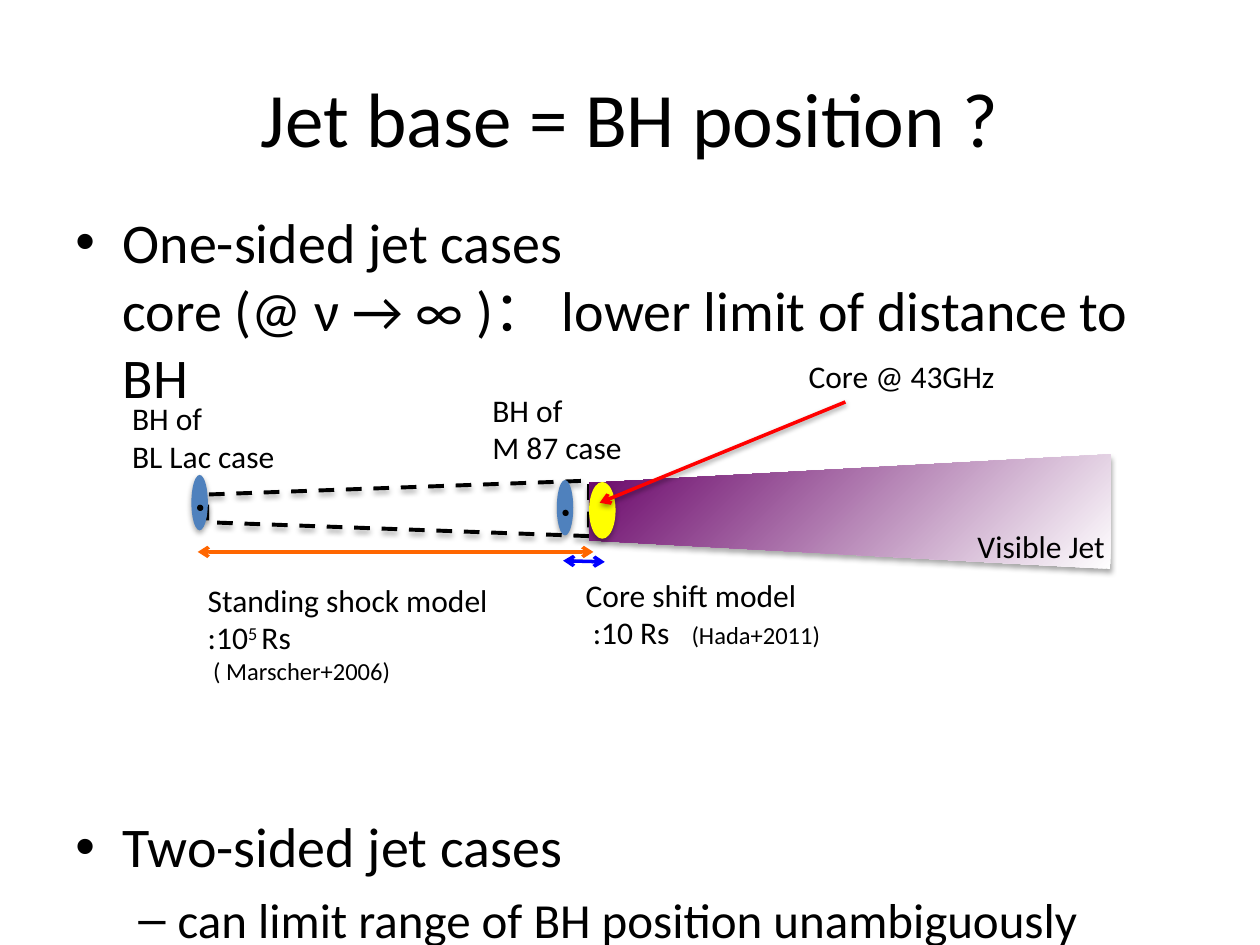
from lxml import etree
from pptx import Presentation
from pptx.dml.color import RGBColor
from pptx.enum.dml import MSO_LINE
from pptx.enum.shapes import MSO_CONNECTOR, MSO_SHAPE
from pptx.enum.text import MSO_ANCHOR, MSO_AUTO_SIZE, PP_ALIGN
from pptx.oxml import parse_xml
from pptx.oxml.ns import qn
from pptx.util import Pt

OVAL, TRAP = MSO_SHAPE.OVAL, MSO_SHAPE.TRAPEZOID
LINE, DASH = MSO_CONNECTOR.STRAIGHT, MSO_LINE.DASH
CENTER, MIDDLE = PP_ALIGN.CENTER, MSO_ANCHOR.MIDDLE
GROW = MSO_AUTO_SIZE.SHAPE_TO_FIT_TEXT
BLACK = RGBColor(0, 0, 0)
YELLOW = RGBColor(0xFF, 0xFF, 0)
DISK = RGBColor(0x4F, 0x81, 0xBD)
RED = RGBColor(0xFF, 0, 0)
BLUE = RGBColor(0, 0, 0xFF)
ORANGE = RGBColor(0xFF, 0x66, 0)
PURPLE = RGBColor(0x66, 0, 0x66)
WHITE = RGBColor(0xFF, 0xFF, 0xFF)
FONT = "Calibri"
NS = 'xmlns:a="http://schemas.openxmlformats.org/drawingml/2006/main"'


def style(run, size):
    run.font.name, run.font.size = FONT, Pt(size)
    run.font.color.rgb = BLACK


def shade(part, dist=1.8, alpha=35):
    """Soft shadow straight below the part."""
    part._element.spPr.find(qn("a:effectLst")).append(parse_xml(
        f'<a:outerShdw {NS} blurRad="{Pt(3.1)}" dist="{Pt(dist)}" dir="5400000" '
        f'rotWithShape="0"><a:srgbClr val="000000"><a:alpha val="{alpha * 1000}"/>'
        '</a:srgbClr></a:outerShdw>'))


def add_form(shapes, kind, box, fill=None, line=None, shadow=True):
    form = shapes.add_shape(kind, *map(Pt, box))
    form.shadow.inherit = False
    if fill is not None:
        form.fill.solid()
        form.fill.fore_color.rgb = fill
    else:
        form.fill.background()
    if line is not None:
        form.line.color.rgb = line
        form.line.width = Pt(0.75)
    else:
        form.line.fill.background()
    if shadow:
        shade(form)
    return form


def add_arrow(shapes, start, end, color, both=True):
    arrow = shapes.add_connector(LINE, *map(Pt, start + end))
    arrow.line.color.rgb = color
    arrow.line.width = Pt(2)
    for tag in ("a:headEnd", "a:tailEnd") if both else ("a:tailEnd",):
        etree.SubElement(arrow.line._get_or_add_ln(), qn(tag), type="arrow")
    etree.SubElement(arrow._element.spPr, qn("a:effectLst"))
    return arrow


def add_label(shapes, box, paras):
    """Each paragraph is a list of (text, size) runs."""
    label = shapes.add_textbox(*map(Pt, box))
    frame = label.text_frame
    frame.word_wrap, frame.auto_size = False, GROW
    for i, runs in enumerate(paras):
        para = frame.paragraphs[0] if i == 0 else frame.add_paragraph()
        for text, size in runs:
            run = para.add_run()
            run.text = text
            style(run, size)
    return label


def add_title(slide, box):
    frame = slide.shapes.add_textbox(*map(Pt, box)).text_frame
    frame.word_wrap, frame.vertical_anchor = True, MIDDLE
    frame.text = "Jet base = BH position ?"
    frame.paragraphs[0].alignment = CENTER
    style(frame.paragraphs[0].runs[0], 44)


def add_body(slide, box):
    frame = slide.shapes.add_textbox(*map(Pt, box)).text_frame
    frame.word_wrap = True
    # text, size, space before, margin, hanging indent, bullet
    rows = [
        ("One-sided jet cases \vcore (@ ν → ∞ )： lower limit of distance to BH",
         32, 6.4, 27, 27, "•"),
        ("Two-sided jet cases", 32, 230, 27, 27, "•"),
        ("can limit range of BH position unambiguously", 28, 5.6, 58.5, 22.5, "–"),
    ]
    for i, (text, size, gap, left, hang, mark) in enumerate(rows):
        para = frame.paragraphs[0] if i == 0 else frame.add_paragraph()
        para.text = text
        para.space_before = Pt(gap)
        for run in para.runs:
            style(run, size)
        props = para._p.get_or_add_pPr()
        props.set("marL", str(Pt(left)))
        props.set("indent", str(-Pt(hang)))
        etree.SubElement(props, qn("a:buFont"), typeface="Arial")
        etree.SubElement(props, qn("a:buChar"), char=mark)


def add_jet(slide, box):
    """Hidden jet (dashed), visible jet, core and its callout."""
    x, y = box
    shapes = slide.shapes
    # Jets: trapezoids turned so that the narrow side is left
    inner = add_form(shapes, TRAP, (x + 93.2, y - 109.1, 31.7, 218.2))
    inner.line.color.rgb = BLACK
    inner.line.width, inner.line.dash_style = Pt(2.25), DASH
    outer = add_form(shapes, TRAP, (x + 334.4, y - 147.2, 65.5, 298.1), PURPLE)
    for jet in (inner, outer):
        jet.rotation = 270
    props = outer._element.spPr
    stops = "".join(f'<a:gs pos="{pos}"><a:srgbClr val="{color}"/></a:gs>'
                    for pos, color in ((0, PURPLE), (100000, WHITE)))
    props.replace(props.find(qn("a:solidFill")), parse_xml(
        f'<a:gradFill {NS} rotWithShape="1"><a:gsLst>{stops}</a:gsLst>'
        '<a:path path="circle"><a:fillToRect r="100000" b="100000"/></a:path>'
        '</a:gradFill>'))
    # Core and callout
    add_form(shapes, OVAL, (x + 218.5, y - 14.7, 14.4, 31.7), YELLOW, YELLOW)
    add_label(shapes, (x + 336.5, y - 90.3, 121.7, 28.8), [[("Core @ 43GHz", 18)]])
    arrow = add_arrow(shapes, (x + 364.6, y - 60.8), (x + 224.2, y - 3.2), RED, False)
    shade(arrow, 1.6, 38)


def add_hole(slide, box, name, model, reach, color):
    """Black hole with its name above, reach arrow and model below."""
    x, y, w, h = box
    shapes = slide.shapes.add_group_shape().shapes
    add_form(shapes, OVAL, box, DISK)
    add_form(shapes, OVAL, (x + 3.2, y + 17, 3.6, 3.6), BLACK, shadow=False)
    dy, length, rise = reach
    add_arrow(shapes, (x + 3.6, y + dy), (x + 3.6 + length, y + dy + rise), color)
    dx, dy, wide, tall, paras = model
    note = add_label(shapes, (x + dx, y + dy, wide, tall), paras)
    dx, dy, wide, text = name
    add_label(shapes, (x + dx, y + dy, wide, 51.1), [[("BH of", 18)], [(text, 18)]])
    return note


def main():
    deck = Presentation()
    deck.slide_width, deck.slide_height = Pt(720), Pt(540)
    slide = deck.slides.add_slide(deck.slide_layouts[6])
    add_jet(slide, (118.5, 290.5))
    add_title(slide, (36, 21.6, 648, 90))
    add_body(slide, (36, 115.2, 648, 389.5))

    # Core shift case, with a tab stop before the citation
    shift = [[("Core shift model", 18)], [(" :10 Rs\t", 18), ("(Hada+2011)", 14)]]
    note = add_hole(slide, (318.2, 274.3, 9.4, 31.7), (-43.9, -54.7, 89.3, "M 87 case"),
                    (9.4, 51.1, 149.8, 51.1, shift), (46.1, 23.8, 0.7), BLUE)
    props = note.text_frame.paragraphs[1]._p.get_or_add_pPr()
    tabs = etree.SubElement(props, qn("a:tabLst"))
    etree.SubElement(tabs, qn("a:tab"), pos=str(Pt(60.5)), algn="l")

    # Standing shock case, with a raised exponent
    shock = [[("Standing shock model", 18)],
             [(":10", 18), ("5 ", 18), ("Rs", 18)], [(" ( Marscher+2006)", 14)]]
    note = add_hole(slide, (109.4, 271.4, 9.4, 31.7), (-41, -46.8, 96.5, "BL Lac case"),
                    (2.2, 56.9, 176.4, 67.7, shock), (44, 226.1, 0), ORANGE)
    power = note.text_frame.paragraphs[1].runs[1]
    power.font._element.set("baseline", "30000")

    add_label(slide.shapes, (551.5, 297.4, 88.6, 28.8), [[("Visible Jet", 18)]])
    deck.save("out.pptx")


if __name__ == "__main__":
    main()
